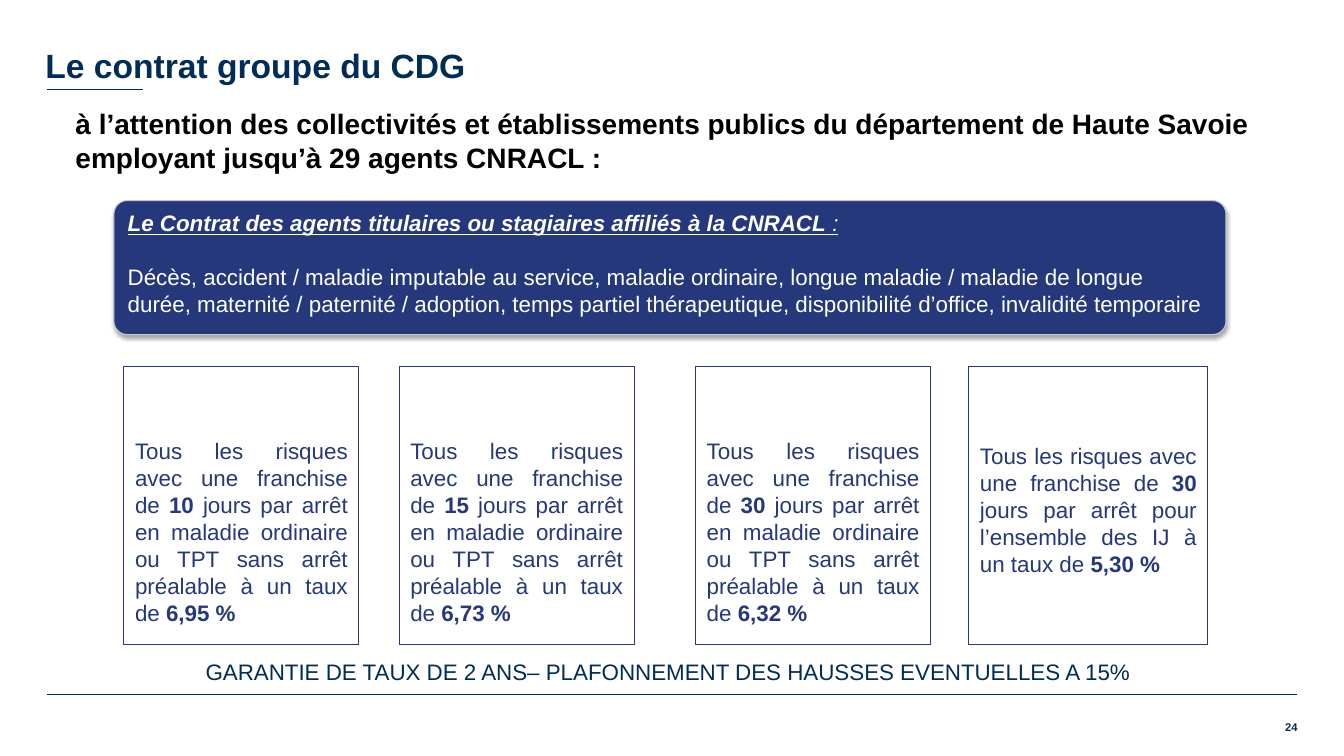
import pptx
import pptx.dml.color
import pptx.enum.shapes
import pptx.enum.text
import pptx.oxml
import pptx.oxml.ns
import pptx.util

PX = 9144  # 100 px to the inch
NAVY, BLUE, WHITE, BLACK, SILVER = "002C58", "25387C", "FFFFFF", "000000", "C7C8CD"
ALIGN = pptx.enum.text.PP_ALIGN
ANCHOR = pptx.enum.text.MSO_ANCHOR
SHAPE = pptx.enum.shapes.MSO_SHAPE
A_NS = pptx.oxml.ns.nsdecls("a")


def px(*lengths):
    return [pptx.util.Emu(length * PX) for length in lengths]


def rgb(value):
    return pptx.dml.color.RGBColor.from_string(value)


def set_frame(frame, insets=(10, 5, 10, 5), anchor=ANCHOR.TOP):
    frame.word_wrap = True
    frame.auto_size = pptx.enum.text.MSO_AUTO_SIZE.NONE
    frame.vertical_anchor = anchor
    (frame.margin_left, frame.margin_top,
     frame.margin_right, frame.margin_bottom) = px(*insets)


def add_run(paragraph, text, size, color, bold=False, italic=False, underline=False):
    run = paragraph.add_run()
    run.text = text
    font = run.font
    font.name, font.size = "Arial", pptx.util.Pt(size)
    font.bold, font.italic, font.underline = bold, italic, underline
    font.color.rgb = rgb(color)


def add_text(slide, box, text, size, color, bold=False, align=ALIGN.LEFT,
             insets=(10, 5, 10, 5)):
    frame = slide.shapes.add_textbox(*px(*box)).text_frame
    set_frame(frame, insets)
    frame.paragraphs[0].alignment = align
    add_run(frame.paragraphs[0], text, size, color, bold)


def add_rule(slide, left, right, y):
    rule = slide.shapes.add_connector(
        pptx.enum.shapes.MSO_CONNECTOR.STRAIGHT, *px(left, y, right, y))
    rule.line.color.rgb = rgb(NAVY)
    rule.line.width = pptx.util.Pt(0.5)
    rule._element.spPr.append(pptx.oxml.parse_xml(f"<a:effectLst {A_NS}/>"))


def add_panel(slide, kind, box, outline):
    panel = slide.shapes.add_shape(kind, *px(*box))
    panel.shadow.inherit = False
    panel.fill.background()
    panel.line.color.rgb = rgb(outline)
    panel.line.width = pptx.util.Pt(0.75)
    return panel


def add_title(slide, text):
    title = slide.shapes.title
    title.left, title.top, title.width, title.height = px(45, 12, 1239, 73)
    set_frame(title.text_frame, (0, 0, 0, 0), ANCHOR.BOTTOM)
    paragraph = title.text_frame.paragraphs[0]
    paragraph.alignment = ALIGN.LEFT
    add_run(paragraph, text, 24, NAVY, bold=True)


def add_contract(slide, heading, risks):
    contract = add_panel(slide, SHAPE.ROUNDED_RECTANGLE, (113, 199, 1103, 133), SILVER)
    contract.adjustments[0] = 0.1
    contract.fill.solid()
    contract.fill.fore_color.rgb = rgb(BLUE)
    # Soft shadow straight below
    effects = contract._element.spPr.find(pptx.oxml.ns.qn("a:effectLst"))
    effects.append(pptx.oxml.parse_xml(
        f'<a:outerShdw {A_NS} blurRad="39370" dist="22860" dir="5400000" rotWithShape="0">'
        f'<a:srgbClr val="{BLACK}"><a:alpha val="35000"/></a:srgbClr></a:outerShdw>'))
    frame = contract.text_frame
    set_frame(frame)
    first = frame.paragraphs[0]
    first.alignment = ALIGN.LEFT
    add_run(first, heading, 16, WHITE, bold=True, italic=True, underline=True)
    add_run(first, ":", 16, WHITE, italic=True, underline=True)
    second = frame.add_paragraph()
    second.alignment = ALIGN.LEFT
    second.space_before = pptx.util.Pt(19)
    add_run(second, risks, 16, WHITE)


def add_option(slide, left, width, text_top, days, cover, rate):
    option = add_panel(slide, SHAPE.RECTANGLE, (left, 364, width, 275), BLUE)
    set_frame(option.text_frame, (11, text_top, 11, 11))
    paragraph = option.text_frame.paragraphs[0]
    paragraph.alignment = ALIGN.JUSTIFY
    add_run(paragraph, "Tous les risques avec une franchise de ", 16, BLUE)
    add_run(paragraph, f"{days} ", 16, BLUE, bold=True)
    add_run(paragraph, f"jours par arrêt {cover} à un taux de", 16, BLUE)
    add_run(paragraph, f" {rate} %", 16, BLUE, bold=True)


def main():
    deck = pptx.Presentation()
    deck.slide_width, deck.slide_height = px(1333, 750)
    slide = deck.slides.add_slide(deck.slide_layouts[5])

    # Title, rules and introduction
    add_rule(slide, 47, 1286, 689)
    add_rule(slide, 47, 142, 89)
    add_title(slide, "Le contrat groupe du CDG")
    add_text(slide, (65, 101, 1193, 77),
             "à l’attention des collectivités et établissements publics du département "
             "de Haute Savoie employant jusqu’à 29 agents CNRACL :", 20, BLACK, bold=True)

    # Contract and its four options
    add_contract(slide, "Le Contrat des agents titulaires ou stagiaires affiliés à la CNRACL ",
                 "Décès, accident / maladie imputable au service, maladie ordinaire, "
                 "longue maladie / maladie de longue durée, maternité / paternité / adoption, "
                 "temps partiel thérapeutique, disponibilité d’office, invalidité temporaire")
    ordinary = "en maladie ordinaire ou TPT sans arrêt préalable"
    for left, width, text_top, days, cover, rate in (
            (123, 233, 70, 10, ordinary, "6,95"),
            (396, 233, 70, 15, ordinary, "6,73"),
            (690, 233, 70, 30, ordinary, "6,32"),
            (961, 237, 75, 30, "pour l’ensemble des IJ", "5,30")):
        add_option(slide, left, width, text_top, days, cover, rate)

    # Guarantee and slide number
    add_text(slide, (194, 648, 961, 37),
             "GARANTIE DE TAUX DE 2 ANS– PLAFONNEMENT DES HAUSSES EVENTUELLES A 15%", 16, NAVY)
    add_text(slide, (1248, 715, 39, 20), "24", 8, NAVY, bold=True,
             align=ALIGN.RIGHT, insets=(0, 0, 0, 0))

    deck.save("out.pptx")


if __name__ == "__main__":
    main()
